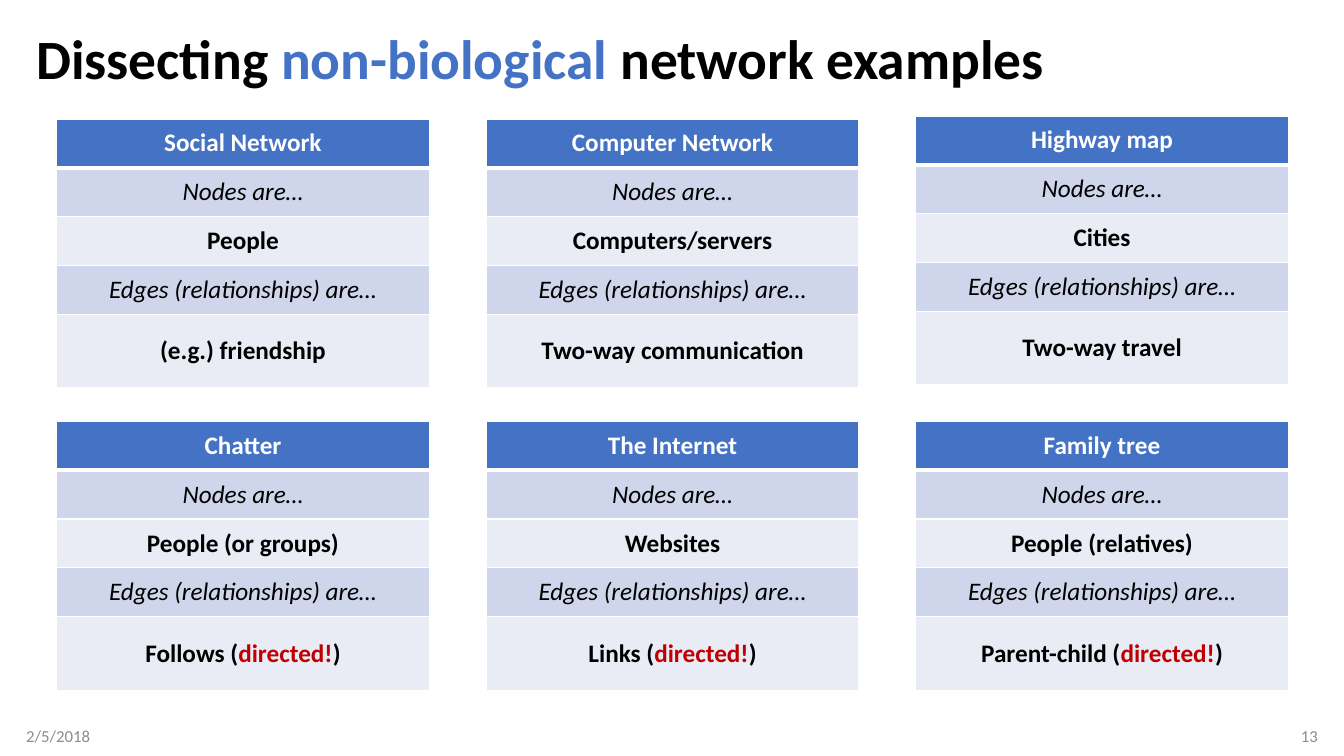
from dataclasses import dataclass

from lxml import etree
from pptx import Presentation
from pptx.dml.color import RGBColor
from pptx.enum.text import MSO_ANCHOR, PP_ALIGN
from pptx.oxml.ns import qn
from pptx.slide import Slide
from pptx.table import _Cell
from pptx.text.text import _Paragraph
from pptx.util import Inches, Pt

MIDDLE = MSO_ANCHOR.MIDDLE
LEFT, CENTER, RIGHT = PP_ALIGN.LEFT, PP_ALIGN.CENTER, PP_ALIGN.RIGHT

FONT = "Calibri"
BLUE, RED, GRAY = "4472C4", "C00000", "8C8C8C"
BLACK, WHITE = "000000", "FFFFFF"
DARK_BAND, LIGHT_BAND = "CFD5EA", "E9EBF5"

TABLE_LEFT, TABLE_TOP = 0.56, 1.18
COLUMN_STEP, ROW_STEP = 4.26, 3.0
TABLE_WIDTH, TABLE_HEIGHT = 3.7, 2.67
LAST_ROW_HEIGHT = 0.73
HIGHWAY_RAISE = 0.03
TABLES_PER_ROW = 3
THIN, THICK = 1, 3


@dataclass(frozen=True)
class Span:
    text: str
    color: str = BLACK


@dataclass(frozen=True)
class Network:
    name: str
    nodes: str
    edges: str
    directed: bool = False
    raised: float = 0


@dataclass(frozen=True)
class RowStyle:
    fill: str
    color: str = BLACK
    italic: bool = False
    top: int = THIN
    bottom: int = THIN


HEADER = RowStyle(BLUE, color=WHITE, bottom=THICK)
ROW_STYLES = [
    HEADER,
    RowStyle(DARK_BAND, italic=True, top=THICK),
    RowStyle(LIGHT_BAND),
    RowStyle(DARK_BAND, italic=True),
    RowStyle(LIGHT_BAND),
]

NETWORKS = [
    Network("Social Network", "People", "(e.g.) friendship"),
    Network("Computer Network", "Computers/servers", "Two-way communication"),
    Network("Highway map", "Cities", "Two-way travel", raised=HIGHWAY_RAISE),
    Network("Chatter", "People (or groups)", "Follows", directed=True),
    Network("The Internet", "Websites", "Links", directed=True),
    Network("Family tree", "People (relatives)", "Parent-child", directed=True),
]


def rgb(color: str) -> RGBColor:
    return RGBColor.from_string(color)


def write(paragraph: _Paragraph, spans: list[Span], size: float,
          align: PP_ALIGN, bold: bool = False, italic: bool = False) -> None:
    paragraph.alignment = align
    font = paragraph.font
    font.name, font.size = FONT, Pt(size)
    font.bold, font.italic = bold, italic
    for span in spans:
        run = paragraph.add_run()
        run.text = span.text
        run.font.color.rgb = rgb(span.color)


def add_text(page: Slide, left: float, top: float, width: float, height: float,
             spans: list[Span], size: float, align: PP_ALIGN = LEFT,
             bold: bool = False, margin_left: float = 0.1,
             margin_right: float = 0.1) -> _Paragraph:
    box = page.shapes.add_textbox(
        Inches(left), Inches(top), Inches(width), Inches(height))
    frame = box.text_frame
    frame.word_wrap = True
    frame.vertical_anchor = MIDDLE
    frame.margin_left = Inches(margin_left)
    frame.margin_right = Inches(margin_right)
    write(frame.paragraphs[0], spans, size, align, bold)
    return frame.paragraphs[0]


def add_borders(cell: _Cell, style: RowStyle) -> None:
    """Draw white cell borders; call before the fill, which must follow them."""
    properties = cell._tc.get_or_add_tcPr()
    widths = {"lnL": THIN, "lnR": THIN, "lnT": style.top, "lnB": style.bottom}
    for side, width in widths.items():
        line = etree.SubElement(properties, qn(f"a:{side}"), w=str(Pt(width)))
        fill = etree.SubElement(line, qn("a:solidFill"))
        etree.SubElement(fill, qn("a:srgbClr"), val=WHITE)


def edge_spans(network: Network) -> list[Span]:
    if not network.directed:
        return [Span(network.edges)]
    return [Span(f"{network.edges} ("), Span("directed!", RED), Span(")")]


def add_network(page: Slide, network: Network, left: float, top: float) -> None:
    rows = [
        [Span(network.name, HEADER.color)],
        [Span("Nodes are…")],
        [Span(network.nodes)],
        [Span("Edges (relationships) are…")],
        edge_spans(network),
    ]
    table = page.shapes.add_table(
        len(rows), 1, Inches(left), Inches(top),
        Inches(TABLE_WIDTH), Inches(TABLE_HEIGHT)).table
    table.horz_banding = False
    row_height = (TABLE_HEIGHT - LAST_ROW_HEIGHT) / (len(rows) - 1)
    for index, (spans, style) in enumerate(zip(rows, ROW_STYLES)):
        is_last = index == len(rows) - 1
        table.rows[index].height = Inches(LAST_ROW_HEIGHT if is_last else row_height)
        cell = table.cell(index, 0)
        add_borders(cell, style)
        cell.fill.solid()
        cell.fill.fore_color.rgb = rgb(style.fill)
        cell.vertical_anchor = MIDDLE
        write(cell.text_frame.paragraphs[0], spans, 18, CENTER,
              bold=not style.italic, italic=style.italic)


def main() -> None:
    deck = Presentation()
    deck.slide_width, deck.slide_height = Inches(13.33), Inches(7.5)
    page = deck.slides.add_slide(deck.slide_layouts[6])

    title = [Span("Dissecting "), Span("non-biological", BLUE),
             Span(" network examples")]
    heading = add_text(page, 0.26, 0.25, 12.81, 0.72, title, 39.6, bold=True)
    heading.line_spacing = 0.9
    add_text(page, 0.26, 7.1, 3, 0.4, [Span("2/5/2018", GRAY)], 12, margin_left=0)
    add_text(page, 10.07, 7.1, 3, 0.4, [Span("13", GRAY)], 12, RIGHT,
             margin_right=0)

    for index, network in enumerate(NETWORKS):
        row, column = divmod(index, TABLES_PER_ROW)
        add_network(page, network, TABLE_LEFT + column * COLUMN_STEP,
                    TABLE_TOP + row * ROW_STEP - network.raised)

    deck.save("out.pptx")


if __name__ == "__main__":
    main()
